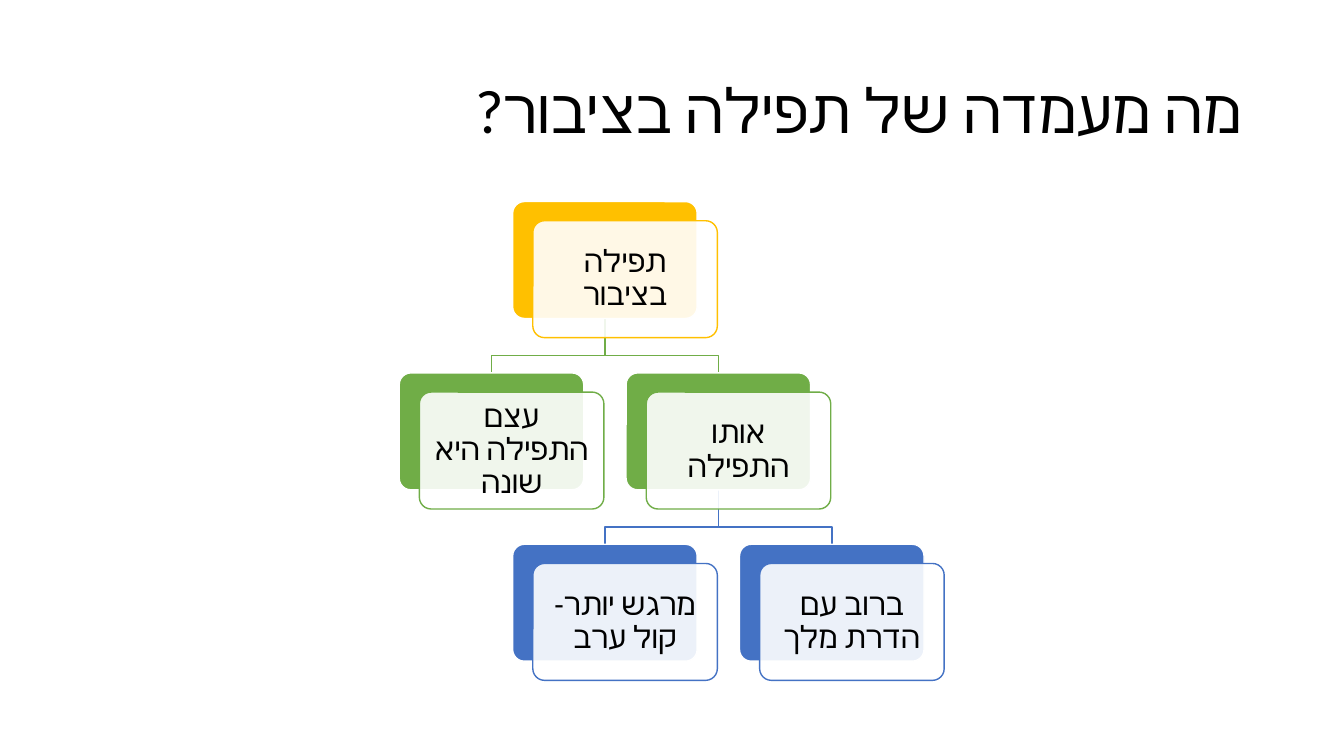
from dataclasses import dataclass

from lxml import etree
from pptx import Presentation
from pptx import util as u
from pptx.dml.color import RGBColor
from pptx.enum import shapes, text
from pptx.oxml.ns import qn

TITLE = "מה מעמדה של תפילה בציבור?"
NODES = {
    "root": ("תפילה בציבור", None, 0, 0),
    "same": ("אותו התפילה", "root", 1, 0.5),
    "king": ("ברוב עם הדרת מלך", "same", 2, 1),
    "moving": ("מרגש יותר- קול ערב", "same", 2, 0),
    "different": ("עצם התפילה היא שונה", "root", 1, -0.5),
}


@dataclass(frozen=True)
class Theme:
    font: str = "Calibri"
    ink: str = "000000"
    paper: str = "FFFFFF"
    levels: tuple = ("FFC000", "70AD47", "4472C4")
    title_size: int = 44
    card_size: int = 22
    line_width: int = 1
    veil: int = 90


THEME = Theme()
CARD_WIDTH, CARD_HEIGHT = 1.83, 1.16
ROOT_CENTER, ROOT_TOP = 6, 2
SIBLING_STEP, LEVEL_STEP = 2.25, 1.7
FRONT_SHIFT = 0.2
ELBOW_DROP = 0.37
CARD_INSET = 0.09


def anchor(name):
    level, column = NODES[name][2:]
    return ROOT_CENTER + column * SIBLING_STEP, ROOT_TOP + level * LEVEL_STEP


def set_line(shape, color):
    shape.line.color.rgb = RGBColor.from_string(color)
    shape.line.width = u.Pt(THEME.line_width)
    shape.shadow.inherit = False


def write(shape, words, size, alignment, inset=None):
    frame = shape.text_frame
    settings = {
        "word_wrap": True,
        "auto_size": text.MSO_AUTO_SIZE.NONE,
        "vertical_anchor": text.MSO_ANCHOR.MIDDLE,
    }
    if inset is not None:
        for side in ("left", "top", "right", "bottom"):
            settings[f"margin_{side}"] = u.Inches(inset)
    for key, value in settings.items():
        setattr(frame, key, value)
    para = frame.paragraphs[0]
    para.alignment = alignment
    para.line_spacing = 0.9
    para._p.get_or_add_pPr().set("rtl", "1")
    span = para.add_run()
    span.text = words
    for key, value in {"name": THEME.font, "size": u.Pt(size)}.items():
        setattr(span.font, key, value)
    span.font.color.rgb = RGBColor.from_string(THEME.ink)
    etree.SubElement(span._r.rPr, qn("a:cs"), typeface=THEME.font)


def add_branch(page, parent, child, color):
    start_x, parent_top = anchor(parent)
    end_x, end_y = anchor(child)
    start_y = parent_top + CARD_HEIGHT
    bend_y = start_y + ELBOW_DROP
    points = [(start_x, start_y), (start_x, bend_y), (end_x, bend_y), (end_x, end_y)]
    start, *rest = [(u.Inches(x), u.Inches(y)) for x, y in points]
    builder = page.shapes.build_freeform(*start)
    builder.add_line_segments(rest, close=False)
    branch = builder.convert_to_shape()
    branch.fill.background()
    set_line(branch, color)


def add_card(page, left, top, fill, line):
    card = page.shapes.add_shape(
        shapes.MSO_SHAPE.ROUNDED_RECTANGLE,
        *map(u.Inches, (left, top, CARD_WIDTH, CARD_HEIGHT)),
    )
    card.adjustments[0] = 0.1
    card.fill.solid()
    card.fill.fore_color.rgb = RGBColor.from_string(fill)
    set_line(card, line)
    return card


def add_node(page, name, words, color):
    center, top = anchor(name)
    left = center - CARD_WIDTH / 2
    add_card(page, left, top, color, THEME.paper)
    front = add_card(page, left + FRONT_SHIFT, top + FRONT_SHIFT - 0.01, THEME.paper, color)
    tint = front._element.spPr.find(qn("a:solidFill")).find(qn("a:srgbClr"))
    etree.SubElement(tint, qn("a:alpha"), val=str(THEME.veil * 1000))
    write(front, words, THEME.card_size, text.PP_ALIGN.CENTER, CARD_INSET)


def main():
    deck = Presentation()
    deck.slide_width, deck.slide_height = u.Inches(13.33), u.Inches(7.5)
    page = deck.slides.add_slide(deck.slide_layouts[5])
    title = page.shapes.title
    place = {"left": 0.92, "top": 0.4, "width": 11.5, "height": 1.45}
    for key, value in place.items():
        setattr(title, key, u.Inches(value))
    write(title, TITLE, THEME.title_size, text.PP_ALIGN.RIGHT)
    for name, (words, parent, level, column) in NODES.items():
        if parent:
            add_branch(page, parent, name, THEME.levels[level])
    for name, (words, parent, level, column) in NODES.items():
        add_node(page, name, words, THEME.levels[level])
    deck.save("out.pptx")


if __name__ == "__main__":
    main()
